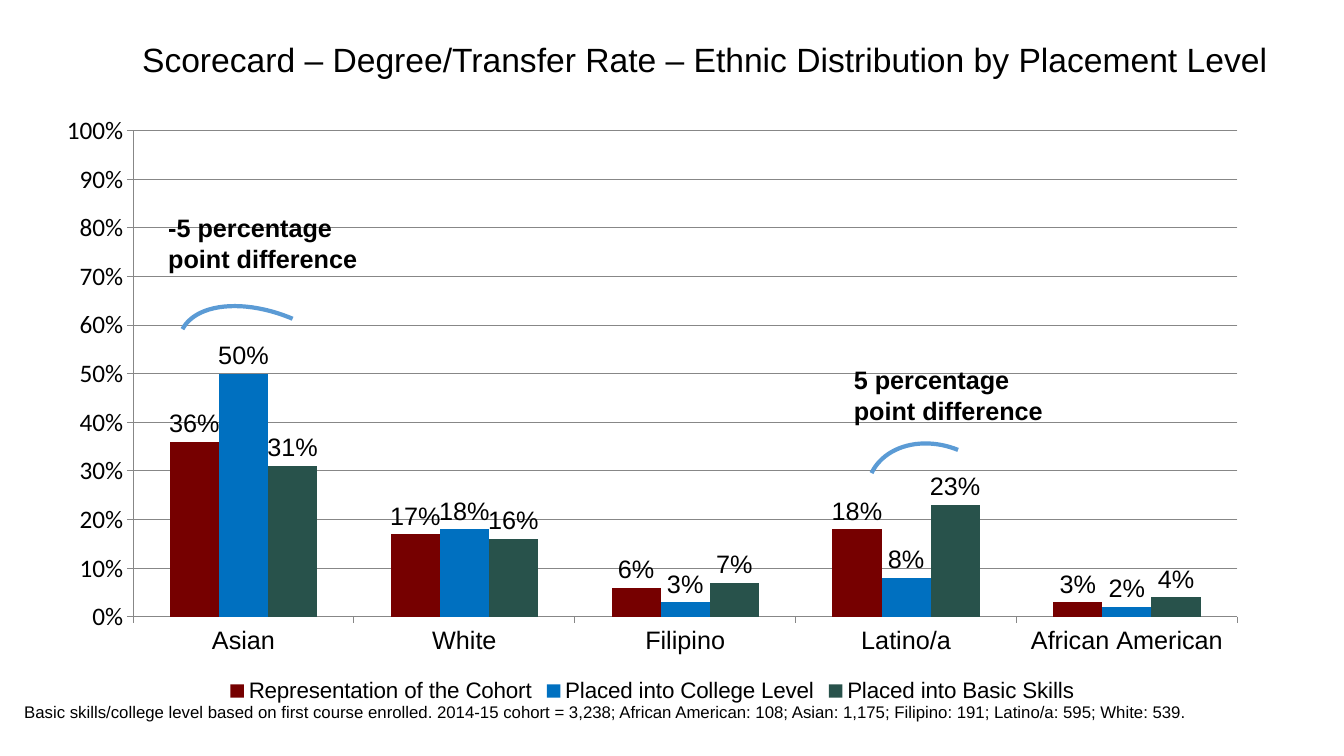
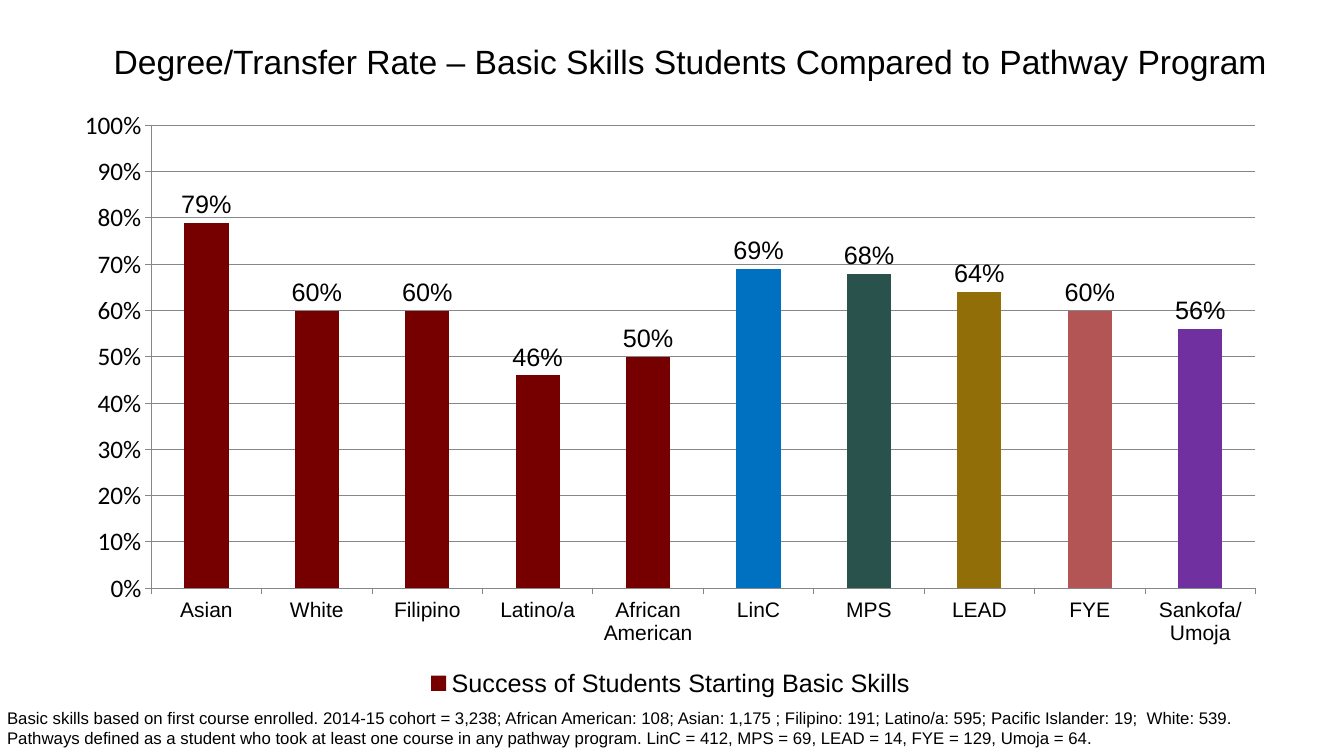
import dataclasses

import lxml.etree
import pptx
import pptx.chart.data
import pptx.dml.color
import pptx.enum.chart
import pptx.enum.shapes
import pptx.enum.text
import pptx.oxml.ns
import pptx.util

RGB = pptx.dml.color.RGBColor
BLACK = RGB(0x00, 0x00, 0x00)
GRAY = RGB(0x87, 0x87, 0x87)
MAROON = RGB(0x76, 0x00, 0x00)
BLUE = RGB(0x00, 0x70, 0xC0)
GREEN = RGB(0x28, 0x52, 0x4B)
GOLD = RGB(0x92, 0x6E, 0x08)
ROSE = RGB(0xB3, 0x55, 0x55)
PURPLE = RGB(0x70, 0x30, 0xA0)
SKY = RGB(0x5B, 0x9B, 0xD5)

TITLE_SIZE, BODY_SIZE, NOTE_SIZE = 24, 18, 12
PERCENT = "0%"
ARC_ROTATION = 113.8
ARC_ENDS = (54.854, 106.372)


@dataclasses.dataclass
class Box:
    """A rectangle on the slide."""

    left: float
    top: float
    width: float
    height: float

    def inner(self, left, top, width, height):
        """Return the box lying at the given percentages of this one."""
        return Box(
            self.left + self.width * left / 100,
            self.top + self.height * top / 100,
            self.width * width / 100,
            self.height * height / 100,
        )

    def emu(self):
        """Return left, top, width and height as whole lengths."""
        return [int(v) for v in (self.left, self.top, self.width, self.height)]


SLIDE = Box(0, 0, pptx.util.Inches(13.33), pptx.util.Inches(7.5))


def assign(target, values):
    """Set each named attribute of the target."""
    for name, value in values.items():
        setattr(target, name, value)


def style_font(font, size=BODY_SIZE, name="Arial", bold=False):
    """Give a font its face, size, weight and black colour."""
    assign(font, {"name": name, "size": pptx.util.Pt(size), "bold": bold})
    font.color.rgb = BLACK


def write(frame, lines, size, bold=False, align=pptx.enum.text.PP_ALIGN.LEFT, inset=0):
    """Fill a text frame with one paragraph for each line."""
    assign(frame, {
        "word_wrap": True,
        "auto_size": pptx.enum.text.MSO_AUTO_SIZE.NONE,
        "vertical_anchor": pptx.enum.text.MSO_ANCHOR.TOP,
        "margin_left": pptx.util.Inches(inset),
        "margin_right": pptx.util.Inches(inset),
        "margin_top": pptx.util.Inches(0.05),
        "margin_bottom": pptx.util.Inches(0.05),
    })
    frame.text = "\n".join(lines)
    for paragraph in frame.paragraphs:
        paragraph.alignment = align
        style_font(paragraph.runs[0].font, size, bold=bold)


def place_title(slide, box, title):
    """Move and format the title placeholder."""
    heading = slide.shapes.title
    assign(heading, dict(zip(("left", "top", "width", "height"), box.emu())))
    write(heading.text_frame, [title], TITLE_SIZE, align=pptx.enum.text.PP_ALIGN.CENTER)


def place_footnote(slide, box, lines):
    """Add the small notes under the chart."""
    note = slide.shapes.add_textbox(*box.emu())
    write(note.text_frame, lines, NOTE_SIZE)


def place_callout(slide, box, lines, arc_share):
    """Add a bold remark with an arc beneath it."""
    shapes = slide.shapes.add_group_shape().shapes
    remark = shapes.add_textbox(*box.inner(0, 0, 100, 33).emu())
    write(remark.text_frame, lines, BODY_SIZE, bold=True, inset=0.1)
    arc = shapes.add_shape(pptx.enum.shapes.MSO_SHAPE.ARC, *box.inner(*arc_share).emu())
    for index, end in enumerate(ARC_ENDS):
        arc.adjustments[index] = end
    arc.rotation = ARC_ROTATION
    arc.shadow.inherit = False
    arc.fill.background()
    arc.line.color.rgb = SKY
    arc.line.width = pptx.util.Pt(3)


def fix_plot(chart, shares):
    """Pin the inner plot area at percentages of the chart."""
    qn = pptx.oxml.ns.qn
    plot_area = chart.element.find(".//" + qn("c:plotArea"))
    for old in plot_area.findall(qn("c:layout")):
        plot_area.remove(old)
    layout = lxml.etree.Element(qn("c:layout"))
    manual = lxml.etree.SubElement(layout, qn("c:manualLayout"))
    settings = [("layoutTarget", "inner"), ("xMode", "edge"), ("yMode", "edge")]
    settings += [(key, str(share / 100)) for key, share in zip("xywh", shares)]
    for key, value in settings:
        lxml.etree.SubElement(manual, qn("c:" + key)).set("val", value)
    plot_area.insert(0, layout)


def style_axes(chart, category_size):
    """Format the category axis, the percent axis and its gridlines."""
    percent, category = chart.value_axis, chart.category_axis
    assign(percent, {"minimum_scale": 0, "maximum_scale": 1, "major_unit": 0.1,
                     "has_major_gridlines": True})
    assign(percent.tick_labels, {"number_format": PERCENT, "number_format_is_linked": False})
    style_font(percent.tick_labels.font, name="Calibri")
    style_font(category.tick_labels.font, category_size)
    for ruled in (percent, category, percent.major_gridlines):
        ruled.format.line.color.rgb = GRAY
        ruled.format.line.width = pptx.util.Pt(0.75)
    for axis in (percent, category):
        axis.major_tick_mark = pptx.enum.chart.XL_TICK_MARK.OUTSIDE


def place_chart(slide, box, content):
    """Add a clustered column chart with labels and a legend."""
    data = pptx.chart.data.CategoryChartData(number_format=PERCENT)
    data.categories = content["categories"]
    for name, _, values in content["series"]:
        data.add_series(name, values)
    chart = slide.shapes.add_chart(
        pptx.enum.chart.XL_CHART_TYPE.COLUMN_CLUSTERED, *box.emu(), data).chart
    style_font(chart.font, name="Calibri")
    assign(chart, {"has_title": False, "has_legend": True})
    assign(chart.legend, {"position": pptx.enum.chart.XL_LEGEND_POSITION.BOTTOM,
                          "include_in_layout": False})
    style_font(chart.legend.font, content["legend_size"])
    style_axes(chart, content["category_size"])
    plot = chart.plots[0]
    assign(plot, {"gap_width": 150, "overlap": 0, "vary_by_categories": False})
    for series, (_, colour, _) in zip(plot.series, content["series"]):
        series.format.fill.solid()
        series.format.fill.fore_color.rgb = colour
        assign(series.data_labels, {
            "show_value": True,
            "number_format": PERCENT,
            "number_format_is_linked": False,
            "position": pptx.enum.chart.XL_LABEL_POSITION.OUTSIDE_END,
        })
        style_font(series.data_labels.font)
    for index, colour in content.get("programs", {}).items():
        fill = plot.series[0].points[index].format.fill
        fill.solid()
        fill.fore_color.rgb = colour
    fix_plot(chart, (7.44, 4.58, 90.52, content["plot_height"]))


def build_slide(deck, content):
    """Add one chart slide with its title, callouts and footnote."""
    slide = deck.slides.add_slide(deck.slide_layouts[5])
    place_chart(slide, SLIDE.inner(*content["chart_box"]), content)
    place_title(slide, SLIDE.inner(*content["title_box"]), content["title"])
    for box, lines, arc_share in content.get("callouts", []):
        place_callout(slide, SLIDE.inner(*box), lines, arc_share)
    place_footnote(slide, SLIDE.inner(*content["footnote_box"]), content["footnote"])


ETHNICITIES = ["Asian", "White", "Filipino", "Latino/a", "African American"]

PLACEMENT = {
    "title": "Scorecard – Degree/Transfer Rate – Ethnic Distribution by Placement Level",
    "title_box": (9.75, 4.53, 85.37, 6.67),
    "chart_box": (3.15, 13.6, 90.77, 80),
    "plot_height": 80.44,
    "category_size": 18,
    "legend_size": 16,
    "categories": ETHNICITIES,
    "series": [
        ("Representation of the Cohort", MAROON, [0.36, 0.17, 0.06, 0.18, 0.03]),
        ("Placed into College Level", BLUE, [0.5, 0.18, 0.03, 0.08, 0.02]),
        ("Placed into Basic Skills", GREEN, [0.31, 0.16, 0.07, 0.23, 0.04]),
    ],
    "callouts": [
        ((62.79, 47.6, 15.75, 28.67), ["5 percentage", "point difference"],
         (16.67, 33.02, 54.76, 66.98)),
        ((11.78, 27.47, 15.75, 34.8), ["-5 percentage", "point difference"],
         (27.14, 24.52, 53.33, 75.48)),
    ],
    "footnote_box": (1.8, 92.13, 95, 4),
    "footnote": [
        "Basic skills/college level based on first course enrolled. 2014-15 cohort = 3,238; "
        "African American: 108; Asian: 1,175; Filipino: 191; Latino/a: 595; White: 539.",
    ],
}

PATHWAY = {
    "title": "Degree/Transfer Rate – Basic Skills Students Compared to Pathway Program",
    "title_box": (7.28, 4.8, 88.15, 6.67),
    "chart_box": (4.5, 12.93, 90.77, 80),
    "plot_height": 76.55,
    "category_size": 15,
    "legend_size": 18,
    "categories": ETHNICITIES + ["LinC", "MPS", "LEAD", "FYE", "Sankofa/\nUmoja"],
    "series": [
        ("Success of Students Starting Basic Skills", MAROON,
         [0.79, 0.6, 0.6, 0.46, 0.5, 0.69, 0.68, 0.64, 0.6, 0.56]),
    ],
    "programs": dict(enumerate((BLUE, GREEN, GOLD, ROSE, PURPLE), len(ETHNICITIES))),
    "footnote_box": (0.53, 92.93, 99, 7),
    "footnote": [
        "Basic skills based on first course enrolled. 2014-15 cohort = 3,238; "
        "African American: 108; Asian: 1,175 ; Filipino: 191; Latino/a: 595; "
        "Pacific Islander: 19;  White: 539.",
        "Pathways defined as a student who took at least one course in any pathway program. "
        "LinC = 412, MPS = 69, LEAD = 14, FYE = 129, Umoja = 64.",
    ],
}


def main():
    """Build and save the deck."""
    deck = pptx.Presentation()
    assign(deck, {"slide_width": SLIDE.width, "slide_height": SLIDE.height})
    for content in (PLACEMENT, PATHWAY):
        build_slide(deck, content)
    deck.save("out.pptx")


if __name__ == "__main__":
    main()
